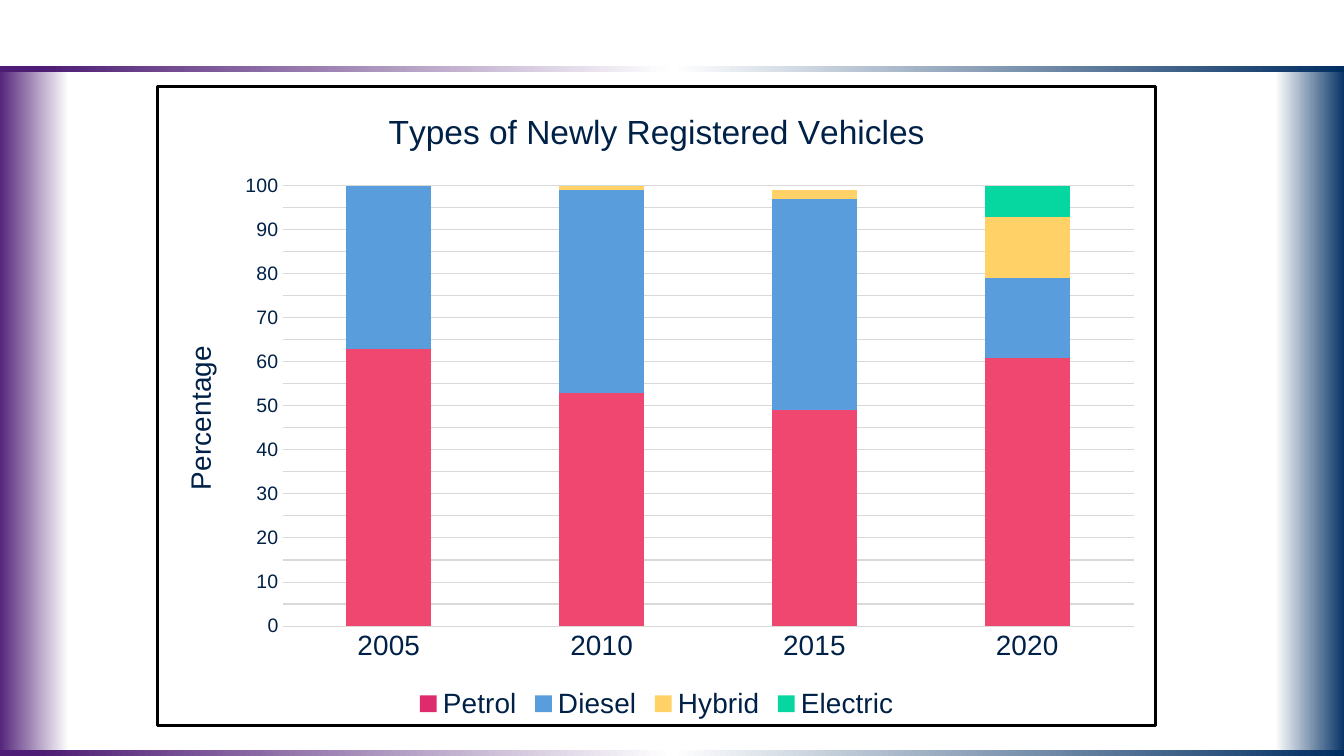
from lxml import etree
from pptx import Presentation
from pptx.chart.data import CategoryChartData
from pptx.dml.color import RGBColor
from pptx.enum import chart as charts, shapes
from pptx.oxml import parse_xml
from pptx.oxml.ns import nsdecls, qn
from pptx.util import Pt

COLORS = {
    "purple": "4D1C74", "blue": "002D61", "white": "FFFFFF",
    "text": "002147", "grid": "D9D9D9", "border": "000000",
    "petrol": "DD2B6B", "petrol bar": "EF476F", "diesel": "599DDC",
    "hybrid": "FFD166", "electric": "06D6A0",
}
FONT = "Arial"
CHART_TITLE = "Types of Newly Registered Vehicles"
AXIS_TITLE = "Percentage"
YEARS = ["2005", "2010", "2015", "2020"]
SHARES = {
    "Petrol": [63, 53, 49, 61],
    "Diesel": [37, 46, 48, 18],
    "Hybrid": [0, 1, 2, 14],
    "Electric": [0, 0, 0, 7],
}
SIDE_TOP, SIDE_WIDTH, SIDE_HEIGHT = 48.2, 51.1, 491
RULE_LEFT, RULE_WIDTH, RULE_HEIGHT = -0.7, 962, 4.3
RULE_STOPS = [(0, "blue"), (50, "white"), (97, "purple")]
# left, top, width, height, rotation, gradient stops
BANDS = [
    (-2.2, SIDE_TOP, SIDE_WIDTH, SIDE_HEIGHT, 0, [(0, "purple"), (100, "white")]),
    (910.8, SIDE_TOP, SIDE_WIDTH, SIDE_HEIGHT, 0, [(0, "white"), (100, "blue")]),
    (RULE_LEFT, 535.7, RULE_WIDTH, RULE_HEIGHT, 180, RULE_STOPS),
    (RULE_LEFT, 47.2, RULE_WIDTH, RULE_HEIGHT, 180, RULE_STOPS),
]
CHART_BOX = (111.6, 60.5, 715, 458.6)
PLOT_FRACTIONS = {"x": 0.125, "y": 0.156, "w": 0.853, "h": 0.689}


def rgb(name):
    return RGBColor.from_string(COLORS[name])


def style_font(font, size):
    font.name = FONT
    font.size = Pt(size)
    font.bold = False
    font.color.rgb = rgb("text")


def add_band(slide, left, top, width, height, rotation, stops):
    band = slide.shapes.add_shape(
        shapes.MSO_SHAPE.RECTANGLE, Pt(left), Pt(top), Pt(width), Pt(height))
    band.shadow.inherit = False
    band.line.fill.background()
    band.rotation = rotation
    band.fill.gradient()
    band.fill.gradient_angle = 0
    stop_list = band.element.spPr.find(".//" + qn("a:gsLst"))
    for old_stop in list(stop_list):
        stop_list.remove(old_stop)
    for position, color in stops:
        stop = etree.SubElement(stop_list, qn("a:gs"), pos=str(position * 1000))
        etree.SubElement(stop, qn("a:srgbClr"), val=COLORS[color])


def set_title(owner, words, size):
    """Give a chart or an axis its title."""
    owner.has_title = True
    title = owner.chart_title if hasattr(owner, "chart_title") else owner.axis_title
    run = title.text_frame.paragraphs[0].add_run()
    run.text = words
    style_font(run.font, size)


def set_border(chart):
    border = parse_xml(
        f'<c:spPr {nsdecls("c", "a")}><a:noFill/><a:ln w="{Pt(2.25)}"><a:solidFill>'
        f'<a:srgbClr val="{COLORS["border"]}"/></a:solidFill></a:ln></c:spPr>')
    chart.element.find(qn("c:chart")).addnext(border)


def place_plot(chart):
    plot_area = chart.element.find(".//" + qn("c:plotArea"))
    for old_layout in plot_area.findall(qn("c:layout")):
        plot_area.remove(old_layout)
    layout = etree.Element(qn("c:layout"))
    manual = etree.SubElement(layout, qn("c:manualLayout"))
    settings = {"layoutTarget": "inner", "xMode": "edge", "yMode": "edge", **PLOT_FRACTIONS}
    for tag, value in settings.items():
        etree.SubElement(manual, qn("c:" + tag), val=str(value))
    plot_area.insert(0, layout)


def style_axes(chart):
    years, percent = chart.category_axis, chart.value_axis
    for axis, size in ((years, 20), (percent, 14)):
        axis.major_tick_mark = axis.minor_tick_mark = charts.XL_TICK_MARK.NONE
        style_font(axis.tick_labels.font, size)
    percent.minimum_scale, percent.maximum_scale, percent.major_unit = 0, 100, 5
    percent.has_major_gridlines = True
    percent.format.line.fill.background()
    for line in (years.format.line, percent.major_gridlines.format.line):
        line.color.rgb = rgb("grid")
        line.width = Pt(0.75)
    set_title(percent, AXIS_TITLE, 20)


def style_series(plot):
    plot.gap_width, plot.overlap = 150, 100
    plot.vary_by_categories = False
    for series in plot.series:
        series.format.fill.solid()
        series.format.fill.fore_color.rgb = rgb(series.name.lower())
    petrol = plot.series[0]
    for index in range(len(YEARS)):
        fill = petrol.points[index].format.fill
        fill.solid()
        fill.fore_color.rgb = rgb("petrol bar")


def add_vehicle_chart(slide):
    data = CategoryChartData()
    data.categories = YEARS
    for fuel, shares in SHARES.items():
        data.add_series(fuel, shares)
    chart = slide.shapes.add_chart(
        charts.XL_CHART_TYPE.COLUMN_STACKED, *map(Pt, CHART_BOX), data).chart
    style_font(chart.font, 20)
    set_title(chart, CHART_TITLE, 24)
    chart.has_legend = True
    chart.legend.position = charts.XL_LEGEND_POSITION.BOTTOM
    chart.legend.include_in_layout = False
    style_font(chart.legend.font, 20)
    style_axes(chart)
    style_series(chart.plots[0])
    place_plot(chart)
    set_border(chart)


def main():
    presentation = Presentation()
    presentation.slide_width, presentation.slide_height = Pt(960), Pt(540)
    slide = presentation.slides.add_slide(presentation.slide_layouts[6])
    slide.background.fill.solid()
    slide.background.fill.fore_color.rgb = rgb("white")
    for band in BANDS:
        add_band(slide, *band)
    add_vehicle_chart(slide)
    presentation.save("out.pptx")


if __name__ == "__main__":
    main()
